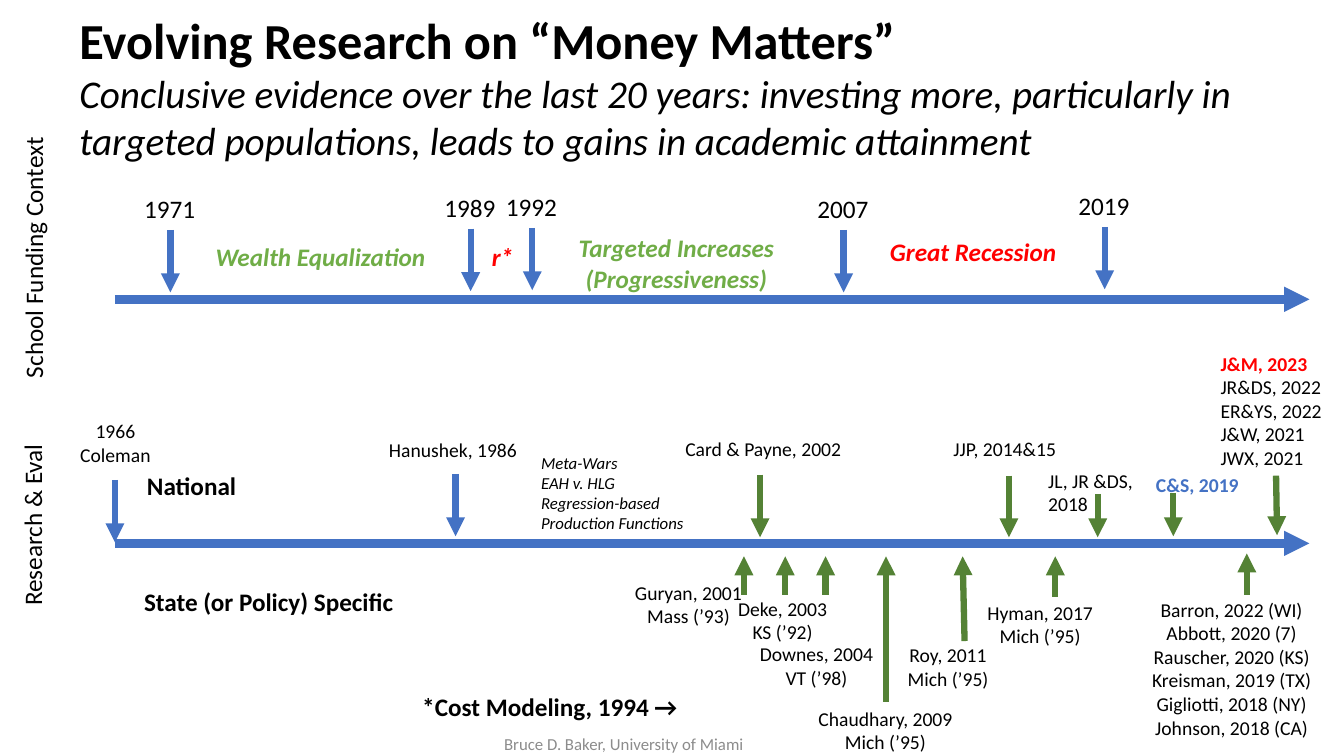
from itertools import zip_longest

from lxml import etree
from pptx import Presentation
from pptx.dml.color import RGBColor
from pptx.enum.shapes import MSO_CONNECTOR
from pptx.enum.text import MSO_ANCHOR, MSO_AUTO_SIZE, PP_ALIGN
from pptx.oxml.ns import qn
from pptx.util import Pt

STRAIGHT = MSO_CONNECTOR.STRAIGHT
LEFT, CENTER = PP_ALIGN.LEFT, PP_ALIGN.CENTER
MIDDLE, TOP = MSO_ANCHOR.MIDDLE, MSO_ANCHOR.TOP
GROW, FIXED = MSO_AUTO_SIZE.SHAPE_TO_FIT_TEXT, MSO_AUTO_SIZE.NONE

FONT = "Calibri"
COLORS = {
    "black": "000000", "blue": "4472C4", "green": "548235",
    "light green": "70AD47", "red": "FF0000", "gray": "8C8C8C",
}
STYLES = {
    "title": (36, "black", True, False),
    "subtitle": (28, "black", False, True),
    "heading": (18, "black", True, False),
    "plain": (18, "black", False, False),
    "growth": (18, "light green", True, True),
    "decline": (18, "red", True, True),
    "study": (14, "black", False, False),
    "new study": (14, "red", True, False),
    "key study": (14, "blue", True, False),
    "debate": (12, "black", False, True),
    "footer": (12, "gray", False, False),
}

AXIS_LEFT, AXIS_RIGHT = 82.1, 935.3
AXIS_HEIGHTS = [213.8, 388.1]

YEARS = [
    ("1971", 121.7, 164.2), ("1989", 336.2, 163.4), ("1992", 380.2, 162.7),
    ("2007", 602.6, 164.2), ("2019", 789.1, 162),
]
YEAR_ARROW_LENGTH = 44.6
YEAR_OFFSET_X, YEAR_OFFSET_Y = 25.9, 29.5

STUDY_ARROWS = [
    ("blue", 82.1, 342.7, 82.1, 387.4),
    ("blue", 325.4, 338.4, 325.4, 383),
    ("green", 542.9, 339.1, 542.9, 383.8),
    ("green", 720.7, 339.8, 720.7, 383.8),
    ("green", 784.1, 352.8, 784.1, 383.8),
    ("green", 838.1, 352.1, 838.1, 383),
    ("green", 911.5, 339.8, 912.2, 382.3),
    ("green", 531.4, 424.8, 531.4, 397.4),
    ("green", 560.9, 424.8, 560.9, 397.4),
    ("green", 589.7, 424.8, 589.7, 397.4),
    ("green", 632.9, 501.1, 632.9, 397.4),
    ("green", 689, 457.9, 687.6, 397.4),
    ("green", 753.8, 426.2, 753.8, 397.4),
    ("green", 890.6, 424.8, 890.6, 395.3),
]

SIDE_LABELS = [
    ((-70.6, 168.5, 188.6, 28.8), "School Funding Context"),
    ((-42.5, 360, 131, 28.8), "Research & Eval"),
]

LEFT_LABELS = [
    ((146.9, 168.5, 166.3, 28.8), ["Wealth Equalization"], ["growth"]),
    ((628.6, 165.6, 134.6, 28.8), ["Great Recession"], ["decline"]),
    ((270.7, 309.6, 107.3, 24.5), ["Hanushek, 1986"], ["study"]),
    ((379.4, 319.7, 117.4, 65.5),
     ["Meta-Wars", "EAH v. HLG", "Regression-based", "Production Functions"],
     ["debate"]),
]

CENTERED_LABELS = [
    ((49.7, 295.9, 65.5, 41), ["1966", "Coleman"], ["study"]),
    ((405.4, 162.7, 155.5, 51.1),
     ["Targeted Increases", "(Progressiveness)"], ["growth"]),
    ((445.7, 411.1, 92.2, 41), ["Guryan, 2001", "Mass (’93)"], ["study"]),
    ((519.8, 422.6, 78.5, 41), ["Deke, 2003", "KS (’92)"], ["study"]),
    ((535, 455, 96.5, 41), ["Downes, 2004", "VT (’98)"], ["study"]),
    ((576.7, 501.1, 111.6, 41), ["Chaudhary, 2009", "Mich (’95)"], ["study"]),
    ((621.4, 455.8, 111.6, 41), ["Roy, 2011", "Mich (’95)"], ["study"]),
    ((697.7, 425.5, 90.7, 41), ["Hyman, 2017", "Mich (’95)"], ["study"]),
    ((815, 423.4, 129.6, 143.3),
     ["Barron, 2022 (WI)", "Abbott, 2020 (7)", "Rauscher, 2020 (KS)",
      "Kreisman, 2019 (TX)", "Gigliotti, 2018 (NY)", "Johnson, 2018 (CA)"],
     ["study"]),
]

WRAPPED_LABELS = [
    ((482.4, 308.2, 128.9, 24.5), ["Card & Payne, 2002"], ["study"]),
    ((673.9, 308.2, 94.3, 24.5), ["JJP, 2014&15"], ["study"]),
    ((741.6, 331.2, 94.3, 41), ["JL, JR &DS, 2018"], ["study"]),
    ((818.6, 334.1, 94.3, 24.5), ["C&S, 2019"], ["key study"]),
    ((864.7, 247.7, 94.3, 92.2),
     ["J&M, 2023", "JR&DS, 2022", "ER&YS, 2022", "J&W, 2021", "JWX, 2021"],
     ["new study", "study"]),
    ((294.5, 490.3, 543.6, 28.8), ["*Cost Modeling, 1994 →"], ["heading"]),
    ((95.8, 415.4, 212.4, 28.8), ["State (or Policy) Specific"], ["heading"]),
    ((97.9, 332.6, 212.4, 28.8), ["National"], ["heading"]),
    ((344.2, 168.5, 31.7, 28.8), ["r*"], ["decline"]),
    ((49.7, 2.9, 872.6, 118.8),
     ["Evolving Research on “Money Matters”",
      "Conclusive evidence over the last 20 years: investing more, particularly "
      "in targeted populations, leads to gains in academic attainment"],
     ["title", "subtitle"]),
]

FOOTER = ((283.7, 517, 324, 28.8), ["Bruce D. Baker, University of Miami"], ["footer"])


def add_arrow(slide, color, start_x, start_y, end_x, end_y, width=4.5):
    arrow = slide.shapes.add_connector(
        STRAIGHT, Pt(start_x), Pt(start_y), Pt(end_x), Pt(end_y))
    arrow.line.color.rgb = RGBColor.from_string(COLORS[color])
    arrow.line.width = Pt(width)
    head = etree.SubElement(arrow.line._get_or_add_ln(), qn("a:tailEnd"))
    head.set("type", "triangle")
    etree.SubElement(arrow._element.spPr, qn("a:effectLst"))


def add_label(slide, box, lines, styles, align=LEFT, wrap=False,
              rotation=0, anchor=TOP, auto_size=GROW):
    shape = slide.shapes.add_textbox(*(Pt(length) for length in box))
    shape.rotation = rotation
    frame = shape.text_frame
    frame.word_wrap = wrap
    frame.auto_size = auto_size
    frame.vertical_anchor = anchor
    for index, (line, style) in enumerate(
            zip_longest(lines, styles, fillvalue=styles[-1])):
        paragraph = frame.add_paragraph() if index else frame.paragraphs[0]
        paragraph.alignment = align
        run = paragraph.add_run()
        run.text = line
        size, color, bold, italic = STYLES[style]
        run.font.name = FONT
        run.font.size = Pt(size)
        run.font.bold = bold
        run.font.italic = italic
        run.font.color.rgb = RGBColor.from_string(COLORS[color])


def main():
    presentation = Presentation()
    presentation.slide_width = Pt(960)
    presentation.slide_height = Pt(540)
    slide = presentation.slides.add_slide(presentation.slide_layouts[6])

    for height in AXIS_HEIGHTS:
        add_arrow(slide, "blue", AXIS_LEFT, height, AXIS_RIGHT, height, 6)
    for year, x, top in YEARS:
        add_arrow(slide, "blue", x, top, x, top + YEAR_ARROW_LENGTH)
        box = (x - YEAR_OFFSET_X, top - YEAR_OFFSET_Y, 51.1, 28.8)
        add_label(slide, box, [year], ["plain"])
    for arrow in STUDY_ARROWS:
        add_arrow(slide, *arrow)

    for box, text in SIDE_LABELS:
        add_label(slide, box, [text], ["plain"], rotation=270)
    for label in LEFT_LABELS:
        add_label(slide, *label)
    for label in CENTERED_LABELS:
        add_label(slide, *label, align=CENTER)
    for label in WRAPPED_LABELS:
        add_label(slide, *label, wrap=True)
    add_label(slide, *FOOTER, align=CENTER, wrap=True, anchor=MIDDLE, auto_size=FIXED)

    presentation.save("out.pptx")


if __name__ == "__main__":
    main()
